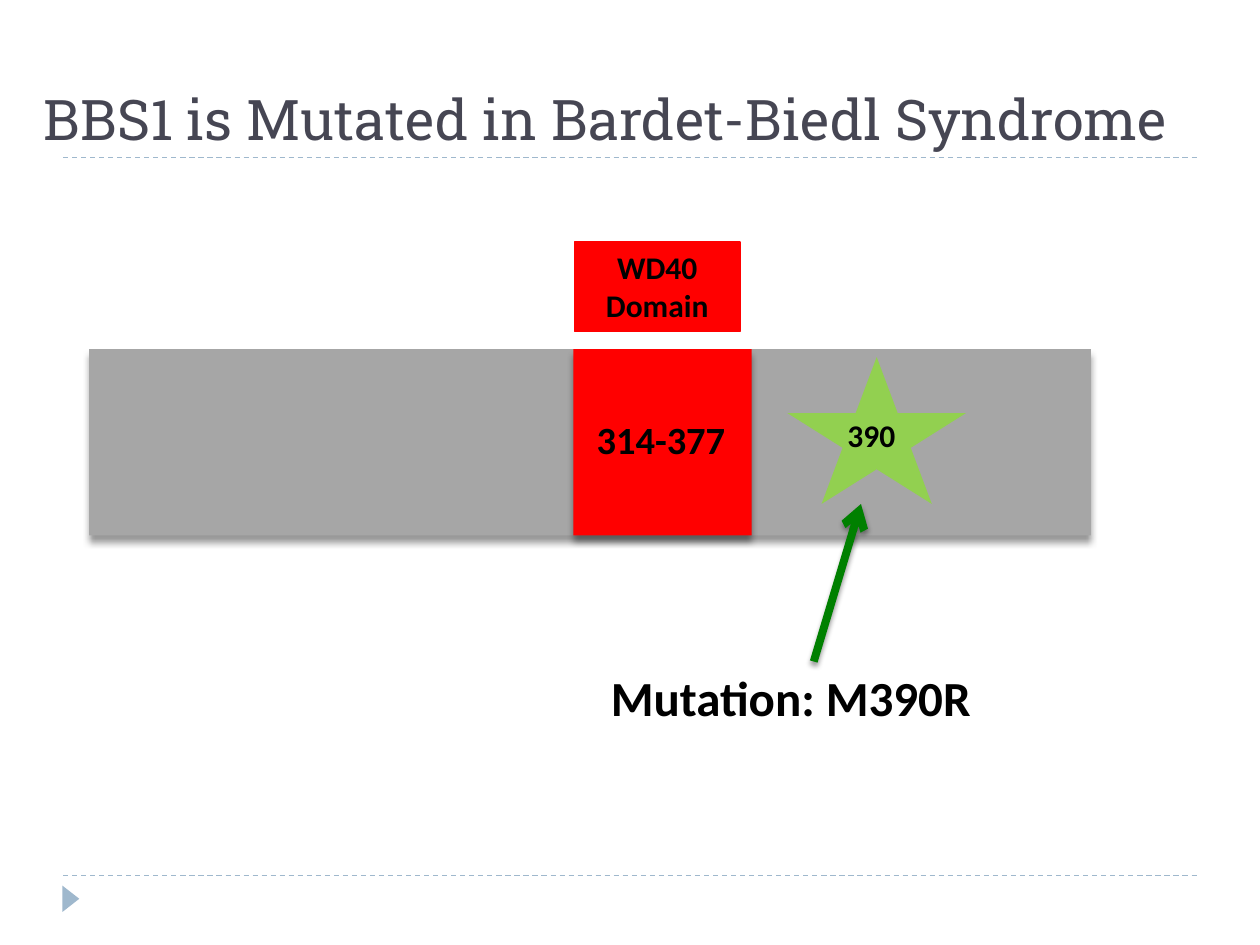
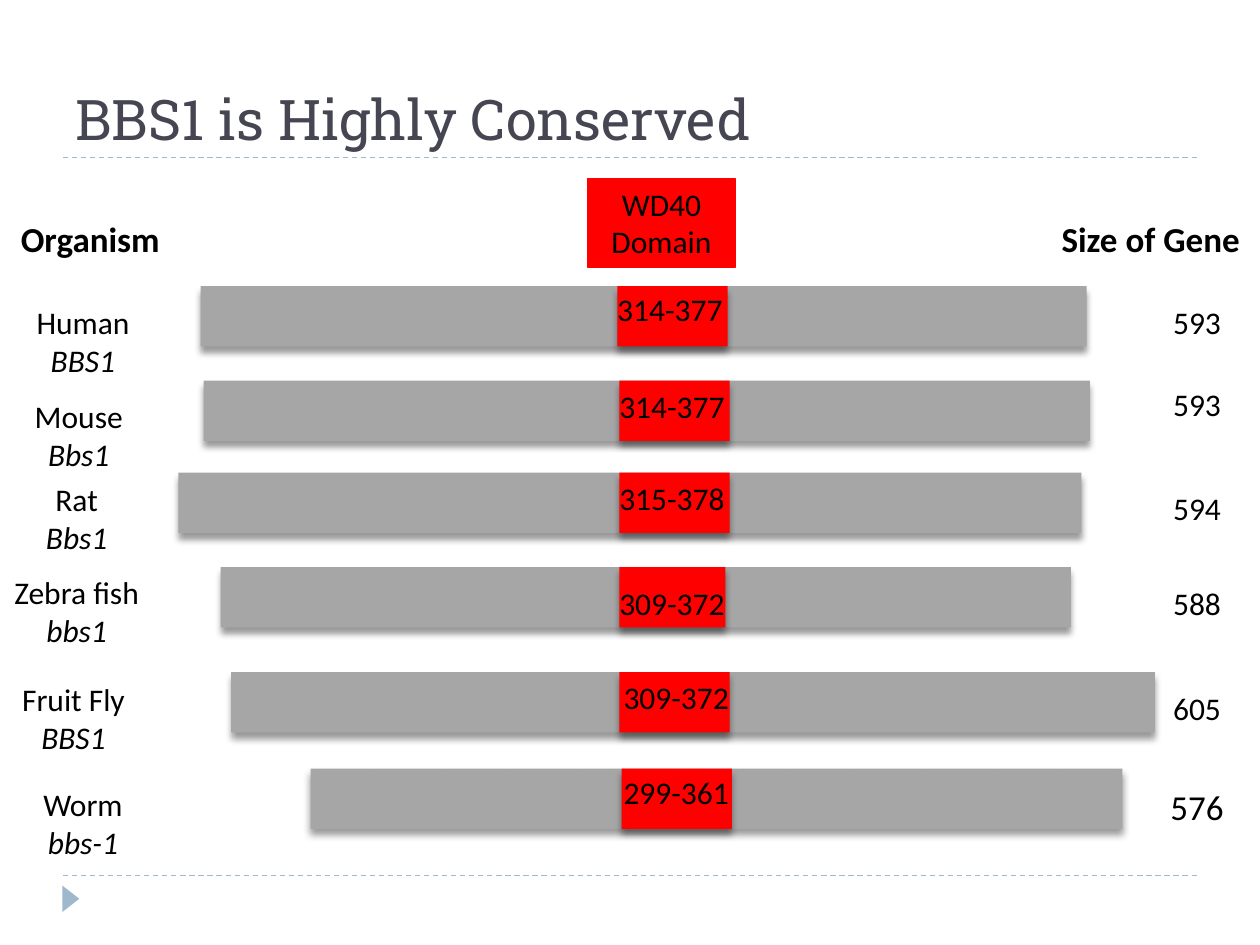
from dataclasses import dataclass

from lxml import etree
from pptx import Presentation
from pptx import util as u
from pptx.dml import color
from pptx.enum import dml, shapes, text
from pptx.oxml import ns

COLUMNS, ROWS = 120, 90
WIDTH, HEIGHT = u.Inches(10), u.Inches(7.5)
BLACK, RED, GREY, BLUE = "000000", "FF0000", "A6A6A6", "9FB8CD"
LIME, GREEN, SLATE = "92D050", "008000", "464653"
BODY = {"name": "Calibri", "size": u.Pt(18)}
STRONG = BODY | {"bold": True}
HEADING = STRONG | {"size": u.Pt(20)}
TITLE = {"name": "Roboto Slab", "size": u.Pt(32)}
BAR_SHADOW, ARROW_SHADOW = (4, 3.4), (3, 2)
BAR_HEIGHT = 5.75


@dataclass
class Box:
    left: float
    top: float
    width: float
    height: float

    def inner(self, left, top, width, height):
        return Box(self.left + left, self.top + top, width, height)

    def place(self):
        return (*point(self.left, self.top), *point(self.width, self.height))


@dataclass
class Organism:
    name: str
    gene: str
    residues: str
    length: str
    top: float
    bar: tuple
    domain: tuple
    name_spot: tuple
    residues_spot: tuple
    length_spot: float = 1
    length_size: int = 18


ORGANISMS = [
    Organism("Human", "BBS1", "314-377", "593", 27.25, (19.1, 84.4), (58.8, 10.5), (7.9, 1), (63.8, -0.2)),
    Organism("Mouse", "Bbs1", "314-377", "593", 36.25, (19.4, 84.4), (59, 10.5), (7.5, 1), (64, 0), -0.2),
    Organism("Rat", "Bbs1", "315-378", "594", 45, (17, 86), (59, 10.5), (7.3, 0.1), (64, 0)),
    Organism("Zebra fish", "bbs1", "309-372", "588", 54, (21, 81), (59, 10.1), (7.3, 0), (64, 1)),
    Organism("Fruit Fly", "BBS1", "309-372", "605", 64, (22, 88), (59, 10.5), (7, 0.2), (64.4, 0)),
    Organism("Worm", "bbs-1", "299-361", "576", 73.2, (29.6, 77.3), (59.2, 10.5), (7.9, 1), (64.4, -0.2),
             length_size=20),
]


def point(column, row):
    return int(WIDTH * column / COLUMNS), int(HEIGHT * row / ROWS)


def paint(target, shade):
    target.solid()
    target.fore_color.rgb = color.RGBColor.from_string(shade)


def add_effects(item, shadow=None):
    properties = item._element.spPr
    effects = etree.SubElement(properties, ns.qn("a:effectLst"))
    if shadow:
        blur, distance = shadow
        outer = etree.SubElement(effects, ns.qn("a:outerShdw"), blurRad=str(u.Pt(blur)),
                                 dist=str(u.Pt(distance)), dir="5400000", rotWithShape="0")
        shade = etree.SubElement(outer, ns.qn("a:srgbClr"), val=BLACK)
        etree.SubElement(shade, ns.qn("a:alpha"), val="40000")


def add_block(page, kind, box, fill, shadow=None):
    block = page.shapes.add_shape(kind, *box.place())
    paint(block.fill, fill)
    block.line.fill.background()
    add_effects(block, shadow)
    return block


def add_line(page, start, end, shade, weight):
    line = page.shapes.add_connector(shapes.MSO_CONNECTOR.STRAIGHT, *point(*start), *point(*end))
    paint(line.line.fill, shade)
    line.line.width = u.Pt(weight)
    return line


def add_text(page, box, lines, style, align=text.PP_ALIGN.CENTER, shade=BLACK, italic_rows=()):
    label = page.shapes.add_textbox(*box.place())
    frame = label.text_frame
    frame.word_wrap = True
    frame.auto_size = text.MSO_AUTO_SIZE.SHAPE_TO_FIT_TEXT
    for row, words in enumerate(lines):
        para = frame.add_paragraph() if row else frame.paragraphs[0]
        para.alignment = align
        span = para.add_run()
        span.text = words
        for key, value in style.items():
            setattr(span.font, key, value)
        paint(span.font.fill, shade)
        if row in italic_rows:
            span.font.italic = True
    return label


def add_domain_key(page, box, style):
    key = add_text(page, box, ["WD40 Domain"], style)
    paint(key.fill, RED)
    paint(key.line.fill, RED)
    key.line.width = u.Pt(0.75)


def add_page(deck, title, title_box):
    page = deck.slides.add_slide(deck.slide_layouts[6])
    for row in (83.4, 15):
        rule = add_line(page, (6, row), (114, row), BLUE, 0.75)
        rule.line.dash_style = dml.MSO_LINE.DASH
        add_effects(rule)
    marker = add_block(page, shapes.MSO_SHAPE.ISOSCELES_TRIANGLE, Box(5.5, 84.8, 2.5, 1.6), BLUE)
    marker.rotation = 90
    heading = add_text(page, title_box, [title], TITLE, text.PP_ALIGN.LEFT, SLATE)
    heading.text_frame.auto_size = text.MSO_AUTO_SIZE.NONE
    heading.text_frame.vertical_anchor = text.MSO_ANCHOR.BOTTOM
    return page


def add_protein(page, box):
    add_block(page, shapes.MSO_SHAPE.RECTANGLE, box, GREY, BAR_SHADOW)
    add_block(page, shapes.MSO_SHAPE.RECTANGLE, box.inner(46.1, 0, 17, box.height), RED, BAR_SHADOW)
    add_text(page, box.inner(46.1, 5.75, 16.7, 5.6), ["314-377"], STRONG | {"size": u.Pt(22)})
    add_domain_key(page, box.inner(46.2, -10.2, 15.8, 8.5), STRONG)
    add_block(page, shapes.MSO_SHAPE.STAR_5_POINT, box.inner(66.5, 0.75, 17, 14), LIME)
    add_text(page, box.inner(68.5, 5.75, 12, 4.8), ["390"], STRONG)


def add_mutation(page, box):
    add_text(page, box, ["Mutation: M390R"], STRONG | {"size": u.Pt(28)}, text.PP_ALIGN.LEFT)
    start = (box.left + box.width / 2, box.top)
    arrow = add_line(page, start, (start[0] + 4.5, start[1] - 15), GREEN, 4.5)
    etree.SubElement(arrow.line._get_or_add_ln(), ns.qn("a:tailEnd"), type="arrow")
    add_effects(arrow, ARROW_SHADOW)


def add_organism(page, box, organism):
    for (left, width), fill in ((organism.bar, GREY), (organism.domain, RED)):
        add_block(page, shapes.MSO_SHAPE.RECTANGLE, box.inner(left, 0, width, box.height), fill, BAR_SHADOW)
    center, top = organism.name_spot
    add_text(page, box.inner(center - 10, top, 20, 8.5), [organism.name, organism.gene], BODY, italic_rows=(1,))
    center, top = organism.residues_spot
    add_text(page, box.inner(center - 7.4, top, 14.8, 4.8), [organism.residues], BODY)
    add_text(page, box.inner(109, organism.length_spot, 10, 4.8), [organism.length],
             BODY | {"size": u.Pt(organism.length_size)})


def add_comparison(page, box):
    for left, words in ((-3, "Organism"), (98, "Size of Gene")):
        add_text(page, box.inner(left, 3.1, 23.2, 5.3), [words], HEADING)
    for organism in ORGANISMS:
        add_organism(page, box.inner(0, organism.top - box.top, box.width, BAR_HEIGHT), organism)
    add_domain_key(page, box.inner(56, 0, 14, 8.5), BODY)


def main():
    deck = Presentation()
    deck.slide_width, deck.slide_height = WIDTH, HEIGHT
    page = add_page(deck, "BBS1 is Mutated in Bardet-Biedl Syndrome", Box(3, 2, 118, 13))
    add_protein(page, Box(8.5, 33.25, 95.4, 17.75))
    add_mutation(page, Box(57, 63, 41, 6.8))
    page = add_page(deck, "BBS1 is Highly Conserved", Box(6, 7, 108, 8))
    add_comparison(page, Box(0, 17, COLUMNS, 66))
    deck.save("out.pptx")


if __name__ == "__main__":
    main()
